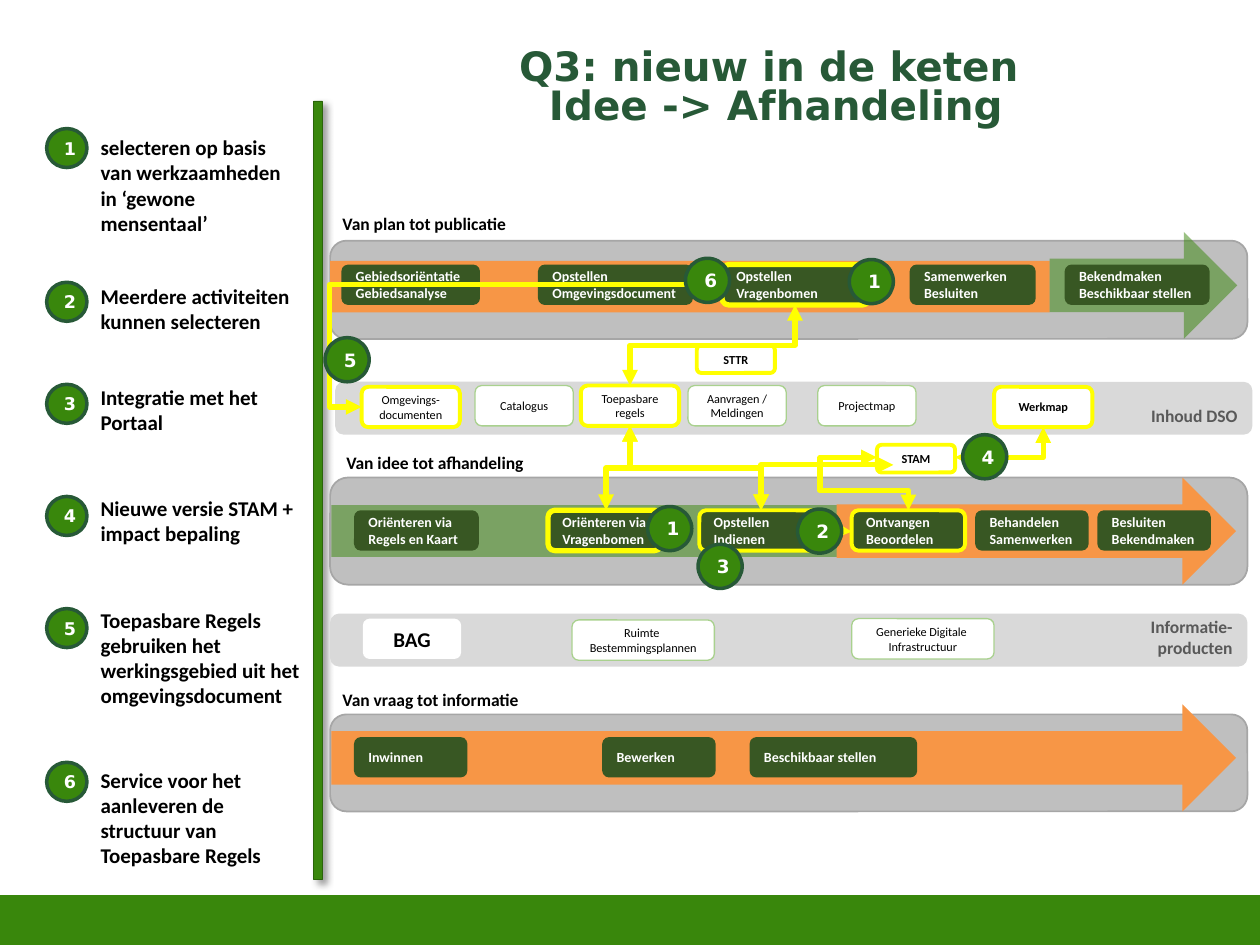
import pptx
import pptx.util
import pptx.dml.color
import pptx.enum.shapes
import pptx.enum.text
import pptx.oxml
from pptx.oxml.ns import nsdecls, qn

Inches, Pt = pptx.util.Inches, pptx.util.Pt
SHAPE = pptx.enum.shapes.MSO_SHAPE
ALIGN = pptx.enum.text.PP_ALIGN
ANCHOR = pptx.enum.text.MSO_ANCHOR

GREEN, RIM, MOSS, ORANGE = "39870C", "275937", "385723", "F79646"
YELLOW, LIME, WHITE, BLACK = "FFFF00", "A9D18E", "FFFFFF", "000000"
LANE, LANE_RIM, STORE, STORE_TEXT = "BFBFBF", "A6A6A6", "D9D9D9", "595959"
BOX_H = 0.32

TITLE = "Q3: nieuw in de keten \vIdee -> Afhandeling"

# number, badge top, text top, text
LEGEND = [
    (1, 1.02, 1.02, "selecteren op basis van werkzaamheden in ‘gewone mensentaal’"),
    (2, 2.24, 2.2, "Meerdere activiteiten kunnen selecteren"),
    (3, 3.05, 3, "Integratie met het Portaal"),
    (4, 3.94, 3.88, "Nieuwe versie STAM + impact bepaling"),
    (5, 4.83, 4.77, "Toepasbare Regels gebruiken het werkingsgebied uit het omgevingsdocument"),
    (6, 6.05, 6.04, "Service voor het aanleveren de structuur van Toepasbare Regels"),
]

# heading, heading left and top, lane top and height
LANES = [
    ("Van plan tot publicatie", 2.62, 1.64, 1.91, 0.78),
    ("Van idee tot afhandeling", 2.65, 3.54, 3.79, 0.85),
    ("Van vraag tot informatie", 2.62, 5.42, 5.67, 0.77),
]

# shape, left, top, width, height, colour, alpha
FLOWS = [
    (SHAPE.RECTANGLE, 2.62, 2.07, 5.71, 0.41, ORANGE, None),
    (SHAPE.RIGHT_ARROW, 8.33, 1.84, 1.49, 0.85, GREEN, 51),
    (SHAPE.RECTANGLE, 2.63, 4.01, 4.02, 0.41, GREEN, 51),
    (SHAPE.RIGHT_ARROW, 6.64, 3.79, 3.17, 0.85, ORANGE, None),
    (SHAPE.RIGHT_ARROW, 2.63, 5.59, 7.18, 0.85, ORANGE, None),
]

STORES = [(2.66, 3.03, "Inhoud DSO"), (2.62, 4.87, "Informatie-\nproducten")]

# row top: (left, width, text, width of the yellow rim if new)
STEPS = {
    2.1: [
        (2.71, 1.1, "Gebiedsoriëntatie\nGebiedsanalyse", 0),
        (4.27, 1.23, "Opstellen\nOmgevingsdocument", 0),
        (5.73, 1.17, "Opstellen Vragenbomen", 3),
        (7.22, 1, "Samenwerken\nBesluiten", 0),
        (8.45, 1.15, "Bekendmaken\nBeschikbaar stellen", 0),
    ],
    4.05: [
        (2.81, 0.99, "Oriënteren via Regels en Kaart", 0),
        (4.35, 0.9, "Oriënteren via\nVragenbomen", 3),
        (5.55, 0.99, "Opstellen\nIndienen", 2.25),
        (6.76, 0.9, "Ontvangen\nBeoordelen", 2.25),
        (7.74, 0.9, "Behandelen\nSamenwerken", 0),
        (8.71, 0.9, "Besluiten\nBekendmaken", 0),
    ],
    5.85: [
        (2.81, 0.9, "Inwinnen", 0),
        (4.78, 0.9, "Bewerken", 0),
        (5.95, 1.33, "Beschikbaar stellen", 0),
    ],
}

# left, top, width, height, text, rim colour, size, bold
PRODUCTS = [
    (2.87, 3.07, 0.78, BOX_H, "Omgevings-documenten", YELLOW, 7, False),
    (3.77, 3.06, 0.78, BOX_H, "Catalogus", LIME, 7, False),
    (4.61, 3.06, 0.78, BOX_H, "Toepasbare regels", YELLOW, 7, False),
    (5.46, 3.06, 0.78, BOX_H, "Aanvragen / Meldingen", LIME, 7, False),
    (6.49, 3.06, 0.78, BOX_H, "Projectmap", LIME, 7, False),
    (7.89, 3.07, 0.78, BOX_H, "Werkmap", YELLOW, 7, True),
    (2.88, 4.91, 0.78, BOX_H, "BAG", None, 12, True),
    (4.54, 4.92, 1.13, BOX_H, "Ruimte \nBestemmingsplannen", LIME, 7, False),
    (6.76, 4.91, 1.13, BOX_H, "Generieke Digitale \nInfrastructuur", LIME, 7, False),
    (5.53, 2.74, 0.62, 0.22, "STTR", YELLOW, 7, True),
    (6.96, 3.53, 0.62, 0.22, "STAM", YELLOW, 7, True),
]

# start, end, leaves vertically, number of segments, bend positions in % of the span
LINKS = [
    ((5, 3.38), (4.81, 4.05), True, 3, [50]),
    ((6.31, 2.42), (5, 3.06), True, 3, [50]),
    ((7.21, 4.05), (6.96, 3.63), True, 4, [37, 280.8]),
    ((7.58, 3.63), (8.28, 3.39), False, 2, []),
    ((6.04, 4.05), (7.09, 3.69), True, 2, []),
    ((6.53, 4.21), (6.76, 4.22), False, 3, [50]),
    ((5, 3.38), (6.04, 4.05), True, 3, [50]),
    ((5.73, 2.26), (2.87, 3.23), False, 3, [108.8]),
]

# number, left, top
BADGES = [(1, 6.74, 2.06), (6, 5.44, 2.05), (5, 2.58, 2.68), (4, 7.64, 3.45),
          (1, 5.14, 4.02), (2, 6.33, 4.04), (3, 5.54, 4.32)]

prs = pptx.Presentation()
prs.slide_width, prs.slide_height = Inches(10), Inches(7.5)
shapes = prs.slides.add_slide(prs.slide_layouts[6]).shapes


def rgb(value):
    return pptx.dml.color.RGBColor.from_string(value)


def write(frame, text, size, color, align=ALIGN.LEFT, bold=True, font="Calibri"):
    frame.text = text
    for paragraph in frame.paragraphs:
        paragraph.alignment = align
        paragraph.font.name, paragraph.font.size = font, Pt(size)
        paragraph.font.bold, paragraph.font.color.rgb = bold, rgb(color)


def block(kind, left, top, width, height, fill, rim=None, rim_width=1.0):
    shape = shapes.add_shape(kind, *map(Inches, (left, top, width, height)))
    shape.shadow.inherit = False
    shape.fill.solid()
    shape.fill.fore_color.rgb = rgb(fill)
    if rim:
        shape.line.color.rgb, shape.line.width = rgb(rim), Pt(rim_width)
    else:
        shape.line.fill.background()
    shape.text_frame.vertical_anchor = ANCHOR.MIDDLE
    return shape


def label(left, top, width, height, text, size, color=BLACK, **style):
    frame = shapes.add_textbox(*map(Inches, (left, top, width, height))).text_frame
    frame.word_wrap = True
    write(frame, text, size, color, **style)
    return frame


def badge(number, left, top, width, height, size):
    frame = block(SHAPE.OVAL, left, top, width, height, GREEN, RIM, 2).text_frame
    frame.margin_left = Inches(0.05)
    frame.margin_right = frame.margin_top = frame.margin_bottom = 0
    write(frame, str(number), size, WHITE, ALIGN.CENTER, font="DejaVu Sans")


def link(start, end, vertical, segments, bends):
    """Draw a bent double arrow; one that leaves vertically is turned a quarter."""
    (x1, y1), (x2, y2) = start, end
    mid_x, mid_y = (x1 + x2) / 2, (y1 + y2) / 2
    half_x, half_y = (x2 - x1) / 2, (y2 - y1) / 2
    if vertical:
        half_x, half_y = half_y, -half_x
    arrow = shapes.add_connector(
        pptx.enum.shapes.MSO_CONNECTOR.ELBOW,
        *map(Inches, (mid_x - half_x, mid_y - half_y, mid_x + half_x, mid_y + half_y)))
    arrow.line.color.rgb, arrow.line.width = rgb(YELLOW), Pt(3)
    props = arrow._element.spPr
    if vertical:
        props.find(qn("a:xfrm")).set("rot", "5400000")
    geometry = props.find(qn("a:prstGeom"))
    geometry.set("prst", f"bentConnector{segments}")
    guides = geometry.find(qn("a:avLst"))
    for i, bend in enumerate(bends, 1):
        guides.append(pptx.oxml.parse_xml(
            f'<a:gd {nsdecls("a")} name="adj{i}" fmla="val {round(bend * 1000)}"/>'))
    for tag in ("headEnd", "tailEnd"):
        props.find(qn("a:ln")).append(pptx.oxml.parse_xml(
            f'<a:{tag} {nsdecls("a")} type="triangle"/>'))
    props.append(pptx.oxml.parse_xml(f'<a:effectLst {nsdecls("a")}/>'))


block(SHAPE.RECTANGLE, 0, 7.12, 10, 0.39, GREEN, GREEN, 2)
divider = block(SHAPE.RECTANGLE, 2.49, 0.8, 0.07, 6.18, GREEN, "2A6409", 0.25)
divider._element.spPr.find(qn("a:effectLst")).append(pptx.oxml.parse_xml(
    f'<a:outerShdw {nsdecls("a")} blurRad="{Pt(4)}" dist="{Pt(3)}" dir="2700000">'
    '<a:srgbClr val="000000"><a:alpha val="40000"/></a:srgbClr></a:outerShdw>'))

title = label(3.24, 0.35, 5.84, 0.73, TITLE, 23.1, RIM,
              align=ALIGN.CENTER, font="DejaVu Sans")
title.paragraphs[0].line_spacing = 0.8

for number, badge_top, text_top, text in LEGEND:
    badge(number, 0.37, badge_top, 0.32, 0.31, 10)
    label(0.7, text_top, 1.85 if number == 5 else 1.77, 0.5, text, 12)

for heading, left, heading_top, top, height in LANES:
    block(SHAPE.ROUNDED_RECTANGLE, 2.62, top, 7.28, height, LANE, LANE_RIM)
    label(left, heading_top, 1.8, 0.27, heading, 10)

for *place, color, alpha in FLOWS:
    flow = block(*place, color)
    if alpha:
        flow._element.spPr.find(qn("a:solidFill"))[0].append(pptx.oxml.parse_xml(
            f'<a:alpha {nsdecls("a")} val="{alpha * 1000}"/>'))

for left, top, text in STORES:
    store = block(SHAPE.ROUNDED_RECTANGLE, left, top, 7.28, 0.42, STORE).text_frame
    store.vertical_anchor = ANCHOR.BOTTOM
    write(store, text, 10, STORE_TEXT, ALIGN.RIGHT)

for top, steps in STEPS.items():
    for left, width, text, rim_width in steps:
        step = block(SHAPE.ROUNDED_RECTANGLE, left, top, width, BOX_H, MOSS,
                     YELLOW if rim_width else None, rim_width)
        write(step.text_frame, text, 8, WHITE)

for *place, text, rim, size, bold in PRODUCTS:
    product = block(SHAPE.ROUNDED_RECTANGLE, *place, WHITE, rim,
                    2.25 if rim == YELLOW else 0.75)
    write(product.text_frame, text, size, BLACK, ALIGN.CENTER, bold)

for route in LINKS:
    link(*route)

for number, left, top in BADGES:
    badge(number, left, top, 0.35, 0.35, 10.5)

prs.save("out.pptx")
